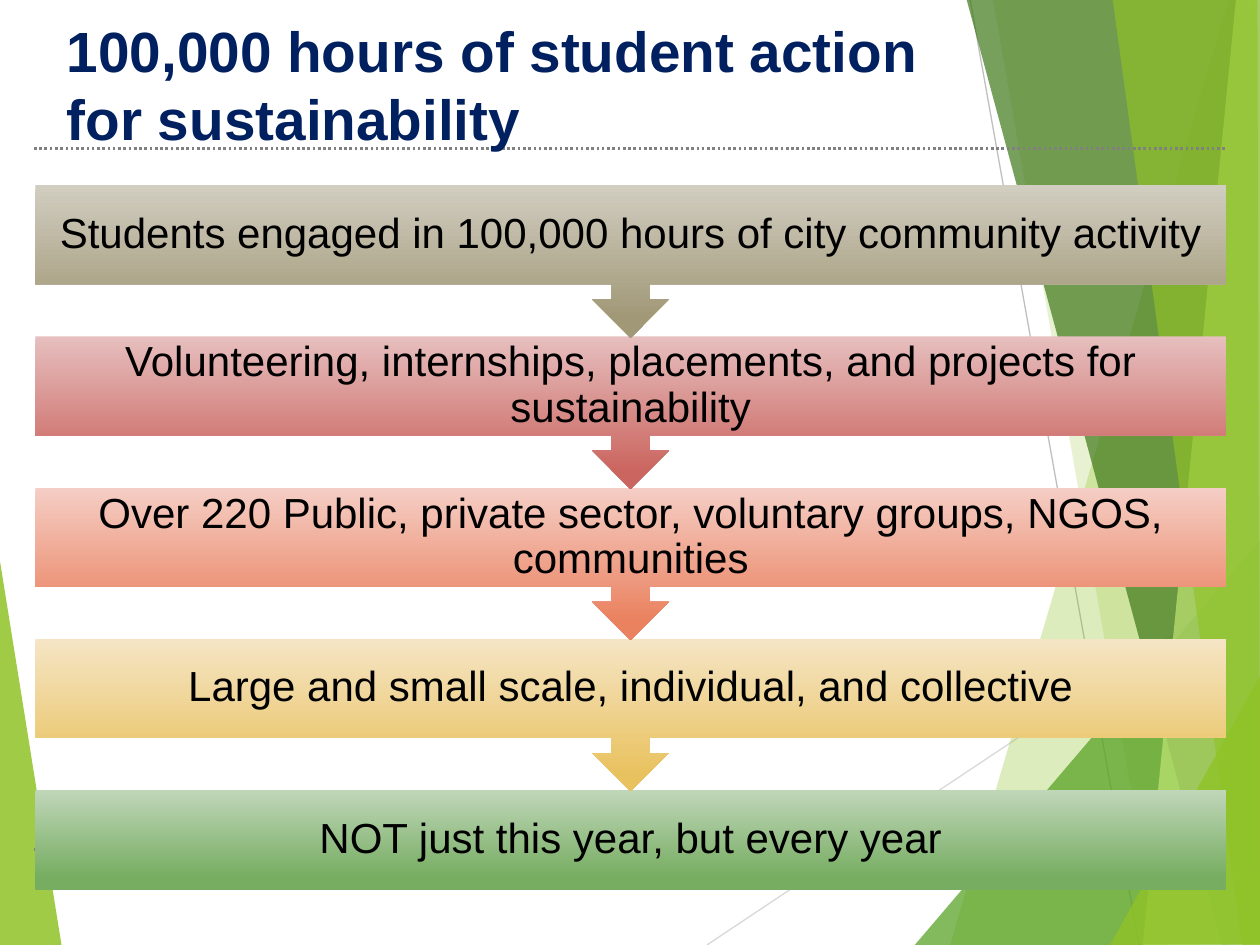
from dataclasses import dataclass

from lxml.etree import SubElement
from pptx import Presentation
from pptx.dml.color import RGBColor
from pptx.enum.dml import MSO_LINE
from pptx.enum.shapes import MSO_CONNECTOR, MSO_SHAPE
from pptx.enum.text import MSO_ANCHOR, PP_ALIGN
from pptx.oxml.ns import qn
from pptx.util import Inches, Pt


@dataclass(frozen=True)
class Theme:
    font: str = "Arial"
    title_size: float = 32.4
    step_size: int = 24
    title: str = "002060"
    text: str = "000000"
    rule: str = "808080"
    pale_line: str = "D9D9D9"
    grey_line: str = "BFBFBF"
    lime: str = "90C226"
    green: str = "54A021"
    forest: str = "3F7819"
    light_lime: str = "C0E474"
    steps: tuple = (
        ("D1CDC0", "A19877"),
        ("E6BFBE", "CB6560"),
        ("F5CEC5", "EA815F"),
        ("F5E5C5", "E9C260"),
        ("C0D6B9", "76AD61"),
    )


theme = Theme()
deck = Presentation()
deck.slide_width = Inches(10)
deck.slide_height = Inches(7.5)
page = deck.slides.add_slide(deck.slide_layouts[5])
shapes = page.shapes


def add_facet(points, color, opacity):
    corners = [(Inches(x), Inches(y)) for x, y in points]
    builder = shapes.build_freeform(*corners[0], scale=1)
    builder.add_line_segments(corners[1:], close=True)
    facet = builder.convert_to_shape()
    facet.shadow.inherit = False
    facet.line.fill.background()
    facet.fill.solid()
    facet.fill.fore_color.rgb = RGBColor.from_string(color)
    color_element = facet.fill._xPr.find(qn("a:solidFill"))[0]
    SubElement(color_element, qn("a:alpha")).set("val", str(opacity * 1000))


def add_line(start, end, color, width, dash=None):
    ends = [Inches(value) for value in (*start, *end)]
    line = shapes.add_connector(MSO_CONNECTOR.STRAIGHT, *ends)
    line.line.color.rgb = RGBColor.from_string(color)
    line.line.width = Pt(width)
    if dash:
        line.line.dash_style = dash
    SubElement(line._element.spPr, qn("a:effectLst"))


add_facet([(-0.01, 4.39), (0.49, 7.51), (-0.01, 7.5)], theme.lime, 85)
add_line((5.61, 7.5), (10.01, 4.57), theme.pale_line, 0.75)
add_line((7.7, 0), (9.04, 7.5), theme.grey_line, 0.75)

facets = [
    ([(9.75, 0), (7.54, 7.5), (10.02, 7.51), (10.01, 0.01)], theme.lime, 30),
    ([(7.88, -0.01), (9.19, 7.5), (10.01, 7.5), (10.01, -0.01)], theme.lime, 20),
    ([(7.26, 7.5), (10, 4.29), (10.01, 7.5)], theme.green, 72),
    ([(7.67, -0.01), (9.7, 7.5), (10.01, 7.49), (10.01, -0.01)], theme.forest, 70),
    ([(9.81, -0.01), (9.07, 7.5), (10.01, 7.5), (10, -0.01)], theme.light_lime, 70),
    ([(8.83, -0.01), (9.86, 7.5), (10, 7.5), (9.98, -0.01)], theme.lime, 65),
    ([(8.81, 7.5), (10.01, 5.35), (10.01, 7.49)], theme.lime, 80),
]
for points, color, opacity in facets:
    add_facet(points, color, opacity)

for top in (1.18, 6.74):
    add_line((0.27, top), (9.73, top), theme.rule, 1.5, MSO_LINE.ROUND_DOT)

title = shapes.title
shapes._spTree.append(title._element)
title.left, title.top = Inches(0.43), Inches(0.04)
title.width, title.height = Inches(7.24), Inches(1.25)
title.text_frame.text = "100,000 hours of student action for sustainability"
title.text_frame.word_wrap = True
title.text_frame.vertical_anchor = MSO_ANCHOR.MIDDLE
para = title.text_frame.paragraphs[0]
para.alignment = PP_ALIGN.LEFT
span = para.runs[0]
span.font.name = theme.font
span.font.size = Pt(theme.title_size)
span.font.bold = True
span.font.color.rgb = RGBColor.from_string(theme.title)

steps = [
    "Students engaged in 100,000 hours of city community activity",
    "Volunteering, internships, placements, and projects for sustainability",
    "Over 220 Public, private sector, voluntary groups, NGOS, communities",
    "Large and small scale, individual, and collective",
    "NOT just this year, but every year",
]
step_top, step_pitch = 1.47, 1.2
callout_height, bar_height = 1.21, 0.79

for index, words in reversed(list(enumerate(steps))):
    is_last = index == len(steps) - 1
    box = shapes.add_shape(
        MSO_SHAPE.RECTANGLE if is_last else MSO_SHAPE.DOWN_ARROW_CALLOUT,
        Inches(0.28),
        Inches(step_top + index * step_pitch),
        Inches(9.45),
        Inches(bar_height if is_last else callout_height),
    )
    box.shadow.inherit = False
    box.line.fill.background()
    box.fill.gradient()
    box.fill.gradient_angle = 270
    for stop, position, color in zip(box.fill.gradient_stops, (0, 0.88), theme.steps[index]):
        stop.position = position
        stop.color.rgb = RGBColor.from_string(color)

    frame = box.text_frame
    frame.text = words
    frame.word_wrap = True
    frame.vertical_anchor = MSO_ANCHOR.MIDDLE
    frame.margin_left = frame.margin_right = Inches(0.19)
    frame.margin_top = frame.margin_bottom = Inches(0.19)
    para = frame.paragraphs[0]
    para.alignment = PP_ALIGN.CENTER
    para.line_spacing = 0.9
    span = para.runs[0]
    span.font.name = theme.font
    span.font.size = Pt(theme.step_size)
    span.font.color.rgb = RGBColor.from_string(theme.text)

deck.save("out.pptx")
